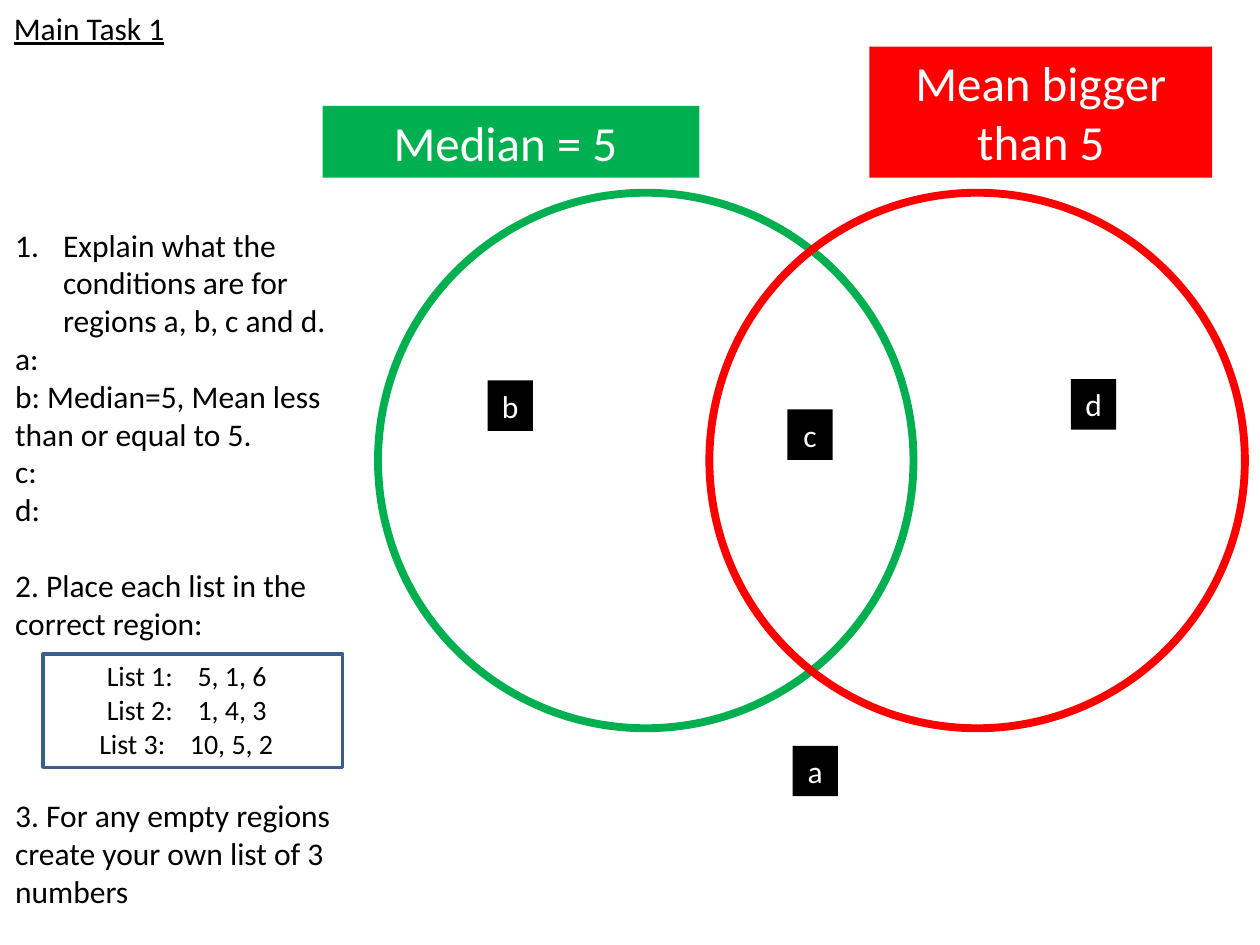
from dataclasses import dataclass

from lxml.etree import SubElement
from pptx import Presentation
from pptx.dml.color import RGBColor
from pptx.enum.shapes import MSO_SHAPE as Preset
from pptx.enum.text import MSO_ANCHOR as Anchor, MSO_AUTO_SIZE as AutoSize, PP_ALIGN as Align
from pptx.oxml.ns import qn
from pptx.util import Inches, Pt

# Grid of 100 columns by 75 rows
COLUMNS, ROWS = 100, 75
WIDTH, HEIGHT = Inches(10), Inches(7.5)
FONT = "Calibri"
BLACK, WHITE, GREEN, RED, BLUE = "000000", "FFFFFF", "00B050", "FF0000", "3A5F8C"
LINE_HEIGHT = 22


@dataclass
class Box:
    column: float
    row: float
    columns: float
    rows: float

    def lengths(self) -> tuple:
        return (round(self.column * WIDTH / COLUMNS), round(self.row * HEIGHT / ROWS),
                round(self.columns * WIDTH / COLUMNS), round(self.rows * HEIGHT / ROWS))


@dataclass
class Label:
    text: str
    box: Box
    fill: str
    size: int


@dataclass
class Circle:
    column: float
    colour: str


@dataclass
class Task:
    text: str
    lines_before: int = 0
    numbered: bool = False


@dataclass
class NumberList:
    name: str
    values: str
    name_column: float


def rgb(colour: str) -> RGBColor:
    return RGBColor.from_string(colour)


def format_text(text_frame, size: int, colour: str, align=Align.LEFT) -> None:
    text_frame.word_wrap = True
    text_frame.auto_size = AutoSize.NONE
    for paragraph in text_frame.paragraphs:
        paragraph.alignment = align
        for run in paragraph.runs:
            run.font.name = FONT
            run.font.size = Pt(size)
            run.font.color.rgb = rgb(colour)


def place(shape, box: Box) -> None:
    shape.left, shape.top, shape.width, shape.height = box.lengths()


def add_preset(shapes, preset, box: Box, fill: str = "", line: str = "", weight: float = 0):
    shape = shapes.add_shape(preset, *box.lengths())
    shape.shadow.inherit = False
    if fill:
        shape.fill.solid()
        shape.fill.fore_color.rgb = rgb(fill)
    else:
        shape.fill.background()
    if line:
        shape.line.color.rgb = rgb(line)
        shape.line.width = Pt(weight)
    else:
        shape.line.fill.background()
    return shape


def add_label(shapes, label: Label) -> None:
    shape = add_preset(shapes, Preset.RECTANGLE, label.box, label.fill)
    shape.text_frame.text = label.text
    shape.text_frame.vertical_anchor = Anchor.TOP
    format_text(shape.text_frame, label.size, WHITE, Align.CENTER)


def set_indent(paragraph, margin: float, first: float):
    properties = paragraph._p.get_or_add_pPr()
    properties.set("marL", str(Inches(margin)))
    properties.set("indent", str(Inches(first)))
    return properties


def fill_tasks(text_frame, tasks: list[Task]) -> None:
    text_frame.text = "\n".join(task.text for task in tasks)
    format_text(text_frame, 18, BLACK)
    for paragraph, task in zip(text_frame.paragraphs, tasks):
        paragraph.space_before = Pt(task.lines_before * LINE_HEIGHT)
        if task.numbered:
            properties = set_indent(paragraph, 0.38, -0.38)
            SubElement(properties, qn("a:buFont"), typeface="+mj-lt")
            SubElement(properties, qn("a:buAutoNum"), type="arabicPeriod")
        else:
            SubElement(set_indent(paragraph, 0, 0), qn("a:buNone"))


def add_number_lists(shapes, lists: list[NumberList]) -> None:
    group = shapes.add_group_shape()
    add_preset(group.shapes, Preset.RECTANGLE, Box(3.4, 51.9, 23.8, 9), WHITE, BLUE, 2)
    text_frame = group.shapes.add_textbox(*Box(-0.4, 51.8, 30.4, 9.1).lengths()).text_frame
    text_frame.text = "\n".join(f"{item.name}\t{item.values}" for item in lists)
    format_text(text_frame, 16, BLACK)
    # A hanging indent carries the values after each name
    name_width = 0.72
    for paragraph, item in zip(text_frame.paragraphs, lists):
        set_indent(paragraph, item.name_column + name_width, -name_width)


TASKS = [
    Task("Explain what the conditions are for regions a, b, c and d.", numbered=True),
    Task("a:"),
    Task("b: Median=5, Mean less than or equal to 5."),
    Task("c:"),
    Task("d:"),
    Task("2. Place each list in the correct region:", lines_before=1),
    Task("3. For any empty regions create your own list of 3 numbers", lines_before=4),
]
HEADINGS = [
    Label("Mean bigger than 5", Box(69, 3.7, 27.2, 10.4), RED, 28),
    Label("Median = 5 ", Box(25.6, 8.4, 29.9, 5.7), GREEN, 28),
]
CIRCLES = [Circle(30, GREEN), Circle(56.3, RED)]
REGIONS = [
    Label(name, Box(column, row, 3.6, 4), BLACK, 18)
    for name, column, row in [("b", 38.7, 30.2), ("d", 85, 30.1),
                              ("a", 62.9, 59.2), ("c", 62.5, 32.5)]
]
LISTS = [
    NumberList("List 1:", "5, 1, 6", 0.79),
    NumberList("List 2:", "1, 4, 3", 0.79),
    NumberList("List 3:", "10, 5, 2", 0.73),
]


def main() -> None:
    presentation = Presentation()
    presentation.slide_width, presentation.slide_height = WIDTH, HEIGHT
    slide = presentation.slides.add_slide(presentation.slide_layouts[1])
    title, body = slide.placeholders

    # Title and questions
    place(title, Box(0.1, 0.2, 36.4, 4))
    title.text_frame.text = "Main Task 1"
    title.text_frame.vertical_anchor = Anchor.TOP
    format_text(title.text_frame, 18, BLACK)
    title.text_frame.paragraphs[0].runs[0].font.underline = True
    place(body, Box(0.2, 17.4, 29.8, 55.5))
    fill_tasks(body.text_frame, TASKS)

    # Venn diagram
    for heading in HEADINGS:
        add_label(slide.shapes, heading)
    for circle in CIRCLES:
        add_preset(slide.shapes, Preset.OVAL, Box(circle.column, 15.3, 42.5, 42.5),
                   line=circle.colour, weight=4.5)
    for region in REGIONS:
        add_label(slide.shapes, region)

    # Lists to sort
    add_number_lists(slide.shapes, LISTS)
    presentation.save("out.pptx")


if __name__ == "__main__":
    main()
